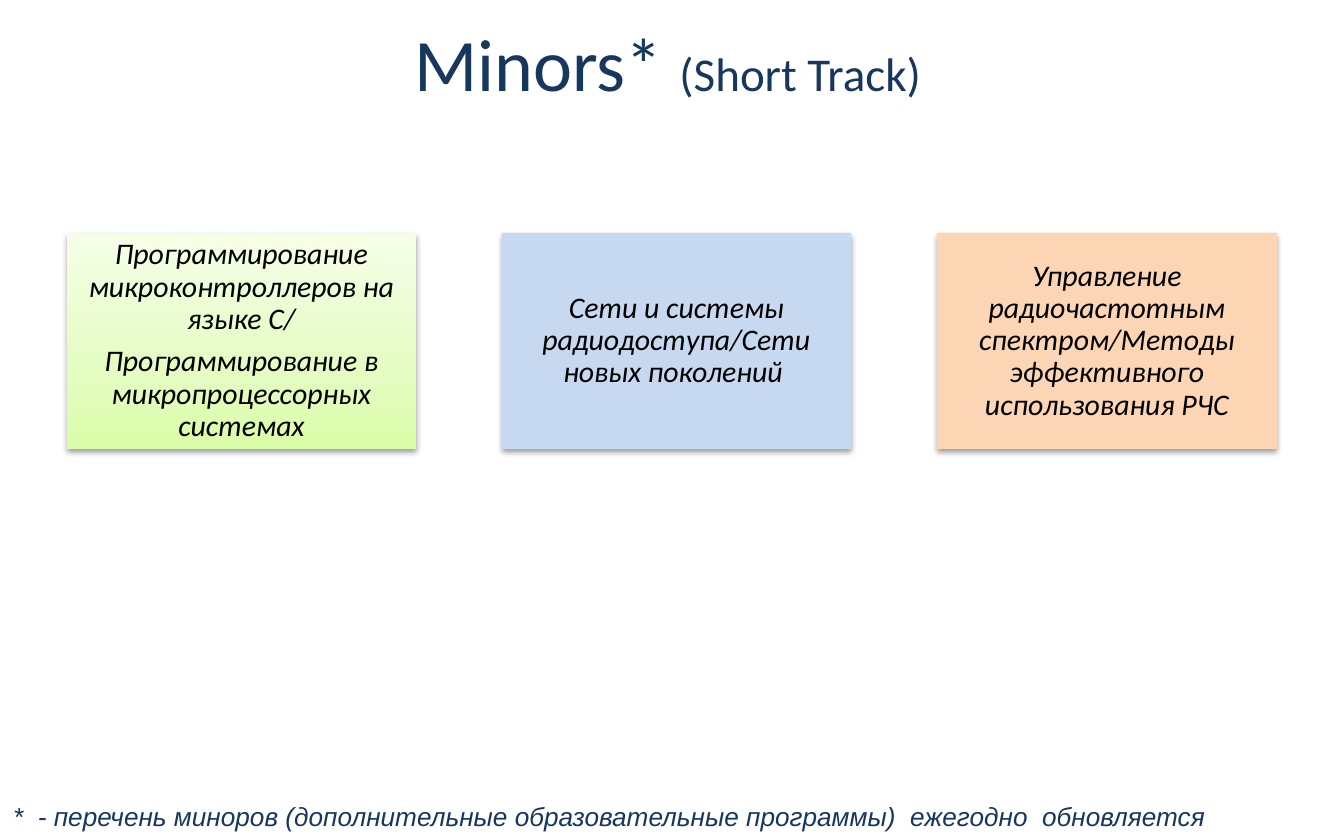
from copy import deepcopy

from lxml.etree import SubElement
from pptx import Presentation
from pptx.dml.color import RGBColor
from pptx.enum.shapes import MSO_SHAPE
from pptx.enum.text import MSO_ANCHOR, MSO_AUTO_SIZE, PP_ALIGN
from pptx.oxml.ns import qn
from pptx.util import Emu, Pt

NAVY = RGBColor(0x17, 0x37, 0x5E)
BLACK = RGBColor(0x00, 0x00, 0x00)
BLUE = RGBColor(0xC6, 0xD9, 0xF1)
ORANGE = RGBColor(0xFC, 0xD5, 0xB5)
GREENS = [(0, RGBColor(0xDA, 0xFD, 0xA7)),
          (0.35, RGBColor(0xE4, 0xFC, 0xC2)),
          (1, RGBColor(0xF5, 0xFF, 0xE7))]


def px(n):
    return Emu(round(n * 914400 / 134.4))


class SlideBuilder:
    heading_font = "Calibri"
    note_font = "Arial"

    def __init__(self, slide):
        self.slide = slide

    @staticmethod
    def place(sp, x, y, w, h):
        sp.left, sp.top, sp.width, sp.height = map(px, (x, y, w, h))

    @staticmethod
    def style(font, name, size, color, italic=None):
        font.name, font.size, font.italic = name, Pt(size), italic
        font.color.rgb = color

    def title(self, runs, x, y, w, h):
        sp = self.slide.shapes.title
        self.place(sp, x, y, w, h)
        tf = sp.text_frame
        tf.auto_size = MSO_AUTO_SIZE.NONE
        tf.vertical_anchor = MSO_ANCHOR.MIDDLE
        p = tf.paragraphs[0]
        p.alignment = PP_ALIGN.CENTER
        for text, size in runs:
            r = p.add_run()
            r.text = text
            self.style(r.font, self.heading_font, size, NAVY)

    def note(self, text, x, y, w, h):
        sp = self.slide.shapes.add_textbox(*map(px, (x, y, w, h)))
        tf = sp.text_frame
        tf.word_wrap = True
        tf.auto_size = MSO_AUTO_SIZE.SHAPE_TO_FIT_TEXT
        p = tf.paragraphs[0]
        p.text = text
        self.style(p.font, self.note_font, 14, NAVY, True)

    def card(self, paragraphs, fill, x, y, w, h):
        """Shadowed box; fill is one colour or a list of gradient stops."""
        sp = self.slide.shapes.add_shape(MSO_SHAPE.RECTANGLE, *map(px, (x, y, w, h)))
        sp.line.fill.background()
        if isinstance(fill, list):
            self.gradient(sp, fill)
        else:
            sp.fill.solid()
            sp.fill.fore_color.rgb = fill
        self.shadow(sp)
        tf = sp.text_frame
        tf.word_wrap = True
        tf.vertical_anchor = MSO_ANCHOR.MIDDLE
        tf.margin_left = tf.margin_right = tf.margin_top = tf.margin_bottom = px(16)
        for i, text in enumerate(paragraphs):
            p = tf.add_paragraph() if i else tf.paragraphs[0]
            p.text = text
            p.alignment = PP_ALIGN.CENTER
            p.line_spacing = 0.9
            p.space_after = Pt(5.6)
            self.style(p.font, self.heading_font, 16, BLACK, True)

    @staticmethod
    def gradient(sp, stops):
        """Fill from the bottom edge upwards."""
        sp.fill.gradient()
        sp.fill.gradient_angle = 90
        gs_list = sp._element.spPr.find(qn("a:gradFill")).find(qn("a:gsLst"))
        while len(gs_list) < len(stops):
            gs_list.append(deepcopy(gs_list[0]))
        for stop, (position, color) in zip(sp.fill.gradient_stops, stops):
            stop.position = position
            stop.color.rgb = color

    @staticmethod
    def shadow(sp):
        sp.shadow.inherit = False
        effects = sp._element.spPr.find(qn("a:effectLst"))
        outer = SubElement(effects, qn("a:outerShdw"), blurRad=str(Pt(3.1)),
                           dist=str(Pt(1.6)), dir="5400000", rotWithShape="0")
        color = SubElement(outer, qn("a:srgbClr"), val=str(BLACK))
        SubElement(color, qn("a:alpha"), val="38000")


def main():
    prs = Presentation()
    prs.slide_width, prs.slide_height = px(1344), px(840)
    s = SlideBuilder(prs.slides.add_slide(prs.slide_layouts[5]))

    s.title([("Minors* ", 39.6), ("(Short Track)  ", 25.2)], 67, 17, 1223, 90)
    s.note("*  - перечень миноров (дополнительные образовательные программы)"
           "  ежегодно  обновляется", 0, 794, 1286, 46)

    minors = [
        (["Программирование микроконтроллеров на языке С/",
          "Программирование в микропроцессорных системах"], GREENS, 349),
        (["Сети и системы радиодоступа/Сети новых поколений "], BLUE, 349),
        (["Управление радиочастотным спектром/Методы эффективного "
          "использования РЧС"], ORANGE, 340),
    ]
    for i, (paragraphs, fill, width) in enumerate(minors):
        s.card(paragraphs, fill, 67 + 435 * i, 233, width, 216)

    prs.save("out.pptx")


if __name__ == "__main__":
    main()
